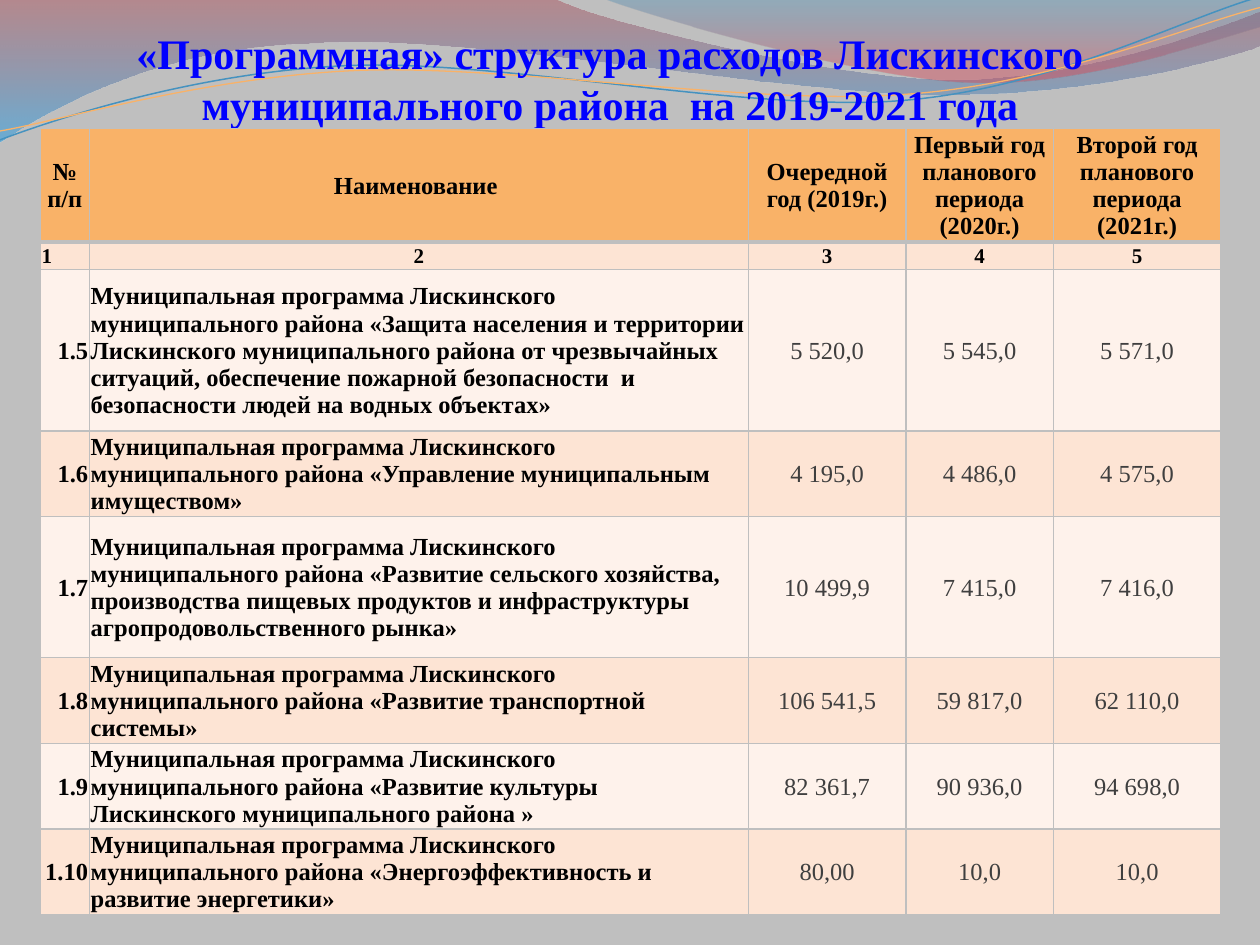
from math import cos, radians, sin

from lxml.etree import SubElement
from pptx import Presentation
from pptx.dml.color import RGBColor
from pptx.enum.text import MSO_ANCHOR, MSO_AUTO_SIZE, PP_ALIGN
from pptx.oxml.ns import qn
from pptx.util import Inches, Pt

COLORS = {
    "background": "BFBFBF", "title": "0000FF", "header": "F9B268",
    "dark_row": "FDE4D4", "light_row": "FEF2EB", "border": "BFBFBF",
    "label": "000000", "amount": "3F3F3F",
    "rose": "A84752", "sky": "249FE6", "steel": "2A7EAF", "coral": "D24B5A",
    "blue_line": "4592BF", "orange_line": "F9B268",
}
FONT = "Times New Roman"
TILT = -2.7


def color(name):
    return RGBColor.from_string(COLORS[name])


def add_wave(slide, start, segments, closed):
    """Outline of straight (2 numbers) and cubic (6 numbers) segments."""
    points = [(s[i], s[i + 1]) for s in segments for i in range(0, len(s), 2)]
    builder = slide.shapes.build_freeform(Inches(start[0]), Inches(start[1]), scale=1.0)
    builder.add_line_segments([(Inches(x), Inches(y)) for x, y in points], close=closed)
    wave = builder.convert_to_shape()
    wave.shadow.inherit = False
    # Gather each three control points into one cubic segment
    steps = iter(list(wave._element.iter(qn("a:lnTo"))))
    for segment in segments:
        step = next(steps)
        if len(segment) == 6:
            step.addprevious(step.makeelement(qn("a:cubicBezTo")))
            cubic = step.getprevious()
            for control in (step, next(steps), next(steps)):
                cubic.append(control[0])
                control.getparent().remove(control)
    return wave


prs = Presentation()
prs.slide_width, prs.slide_height = Inches(10), Inches(7.5)
slide = prs.slides.add_slide(prs.slide_layouts[5])
slide.background.fill.solid()
slide.background.fill.fore_color.rgb = color("background")

# Translucent waves: start, segments, (position, colour, opacity in percent)
bands = [
    ((0, 0),
     [(4.4, -0.01), (4.76, 0.17, 6.64, 0.63, 7.58, 0.63), (8.53, 0.63, 9.58, 0.26, 10, 0.09),
      (10.01, 0.36), (9.83, 0.44, 8.7, 0.76, 7.46, 0.75), (6.22, 0.75, 3.82, 0.28, 2.57, 0.34),
      (1.29, 0.36, 0.46, 0.83, -0.01, 1.13)],
     [(0, "rose", 45), (1, "sky", 55)]),
    ((4.79, -0.01),
     [(5.09, 0.11, 6.82, 0.62, 7.69, 0.65), (8.56, 0.69, 9.61, 0.32, 10, 0.21), (10, 0)],
     [(0, "steel", 30), (0.8, "coral", 45)]),
]
for start, segments, stops in bands:
    band = add_wave(slide, start, segments, True)
    band.line.fill.background()
    band.fill.gradient()
    band.fill.gradient_angle = 270
    for stop, (position, name, _) in zip(band.fill.gradient_stops, stops):
        stop.position = position
        stop.color.rgb = color(name)
    for rgb, (_, _, opacity) in zip(band._element.spPr.iter(qn("a:srgbClr")), stops):
        SubElement(rgb, qn("a:alpha"), val=str(opacity * 1000))

# Thin curved lines, laid level around their centre and then tilted
curves = [
    ((4.99, 0.58), (0, 1.11),
     [(0.48, 0.93, 1.58, 0.57, 2.77, 0.52), (3.95, 0.47, 5.93, 0.89, 7.13, 0.8),
      (8.33, 0.71, 9.38, 0.15, 9.98, -0.02)], "blue_line", 0.85),
    ((5, 0.59), (0, 1.04),
     [(0.47, 0.96, 1.64, 0.61, 2.83, 0.56), (4.03, 0.51, 5.97, 0.84, 7.17, 0.75),
      (8.36, 0.67, 9.41, 0.21, 10, 0.06)], "orange_line", 0.75),
]
cosine, sine = cos(radians(-TILT)), sin(radians(-TILT))
for (cx, cy), start, segments, name, width in curves:
    level = []
    for segment in [start] + segments:
        pairs = zip(segment[::2], segment[1::2])
        level.append([v for x, y in pairs for v in (
            cx + (x - cx) * cosine - (y - cy) * sine,
            cy + (x - cx) * sine + (y - cy) * cosine)])
    curve = add_wave(slide, level[0], level[1:], False)
    curve.rotation = TILT
    curve.fill.background()
    curve.line.color.rgb = color(name)
    curve.line.width = Pt(width)

# Title, brought in front of the waves
title = slide.shapes.title
slide.shapes._spTree.append(title._element)
title.left, title.top, title.width, title.height = [Inches(v) for v in (0.23, 0.24, 9.22, 0.78)]
heading = title.text_frame
heading.text = "«Программная» структура расходов Лискинского муниципального района  на 2019-2021 года"
heading.auto_size = MSO_AUTO_SIZE.NONE
heading.word_wrap = True
heading.vertical_anchor = MSO_ANCHOR.BOTTOM
heading.margin_left = heading.margin_right = heading.margin_bottom = 0
heading.margin_top = Inches(0.05)
heading.paragraphs[0].alignment = PP_ALIGN.CENTER
title_font = heading.paragraphs[0].runs[0].font
title_font.name, title_font.size, title_font.bold = FONT, Pt(24), True
title_font.color.rgb = color("title")

# Programme spending
PROGRAM = "Муниципальная программа Лискинского муниципального района "
rows = [
    ["№ п/п", "Наименование ", "Очередной год (2019г.)",
     "Первый год планового периода (2020г.)", "Второй год планового периода (2021г.)"],
    ["1", "2", "3", "4", "5"],
    ["1.5", PROGRAM + "«Защита населения и территории Лискинского муниципального района "
     "от чрезвычайных ситуаций, обеспечение пожарной безопасности  и безопасности людей "
     "на водных объектах»", "5 520,0", "5 545,0", "5 571,0"],
    ["1.6", PROGRAM + "«Управление муниципальным имуществом» ", "4 195,0", "4 486,0", "4 575,0"],
    ["1.7", PROGRAM + "«Развитие сельского хозяйства, производства пищевых продуктов "
     "и инфраструктуры агропродовольственного рынка»", "10 499,9", "7 415,0", "7 416,0"],
    ["1.8", PROGRAM + "«Развитие транспортной системы» ", "106 541,5", "59 817,0", "62 110,0"],
    ["1.9", PROGRAM + "«Развитие культуры Лискинского муниципального района »",
     "82 361,7", "90 936,0", "94 698,0"],
    ["1.10", PROGRAM + "«Энергоэффективность и развитие энергетики» ", "80,00", "10,0", "10,0"],
]
column_widths = [0.39, 5.23, 1.25, 1.17, 1.33]
row_heights = [0.9, 0.22, 1.28, 0.68, 1.12, 0.68, 0.68, 0.68]
spending = slide.shapes.add_table(
    len(rows), len(column_widths), Inches(0.32), Inches(1.02),
    Inches(sum(column_widths)), Inches(sum(row_heights))).table
for column, width in zip(spending.columns, column_widths):
    column.width = Inches(width)
for row, height in zip(spending.rows, row_heights):
    row.height = Inches(height)

for r, row in enumerate(rows):
    row_fill = "header" if r == 0 else "dark_row" if r % 2 else "light_row"
    for c, text in enumerate(row):
        cell = spending.cell(r, c)
        cell.text_frame.text = text
        cell.vertical_anchor = MSO_ANCHOR.MIDDLE
        cell.margin_left = cell.margin_right = cell.margin_top = Inches(0.01)
        cell.margin_bottom = 0

        paragraph = cell.text_frame.paragraphs[0]
        paragraph.alignment = PP_ALIGN.CENTER
        if r >= 2 and c == 0:
            paragraph.alignment = PP_ALIGN.RIGHT
        elif (r >= 2 and c == 1) or (r == 1 and c == 0):
            paragraph.alignment = PP_ALIGN.LEFT

        is_amount = r >= 2 and c >= 2
        font = paragraph.runs[0].font
        font.name, font.size, font.bold = FONT, Pt(12 if r == 1 else 14), not is_amount
        font.color.rgb = color("amount" if is_amount else "label")

        # Borders precede the fill in the cell properties
        properties = cell._tc.get_or_add_tcPr()
        for side in ("L", "R", "T", "B"):
            thick = (r == 0 and side == "B") or (r == 1 and side == "T")
            border = SubElement(properties, qn(f"a:ln{side}"), w=str(Pt(3 if thick else 1)))
            SubElement(SubElement(border, qn("a:solidFill")), qn("a:srgbClr"), val=COLORS["border"])
        cell.fill.solid()
        cell.fill.fore_color.rgb = color(row_fill)

prs.save("out.pptx")
